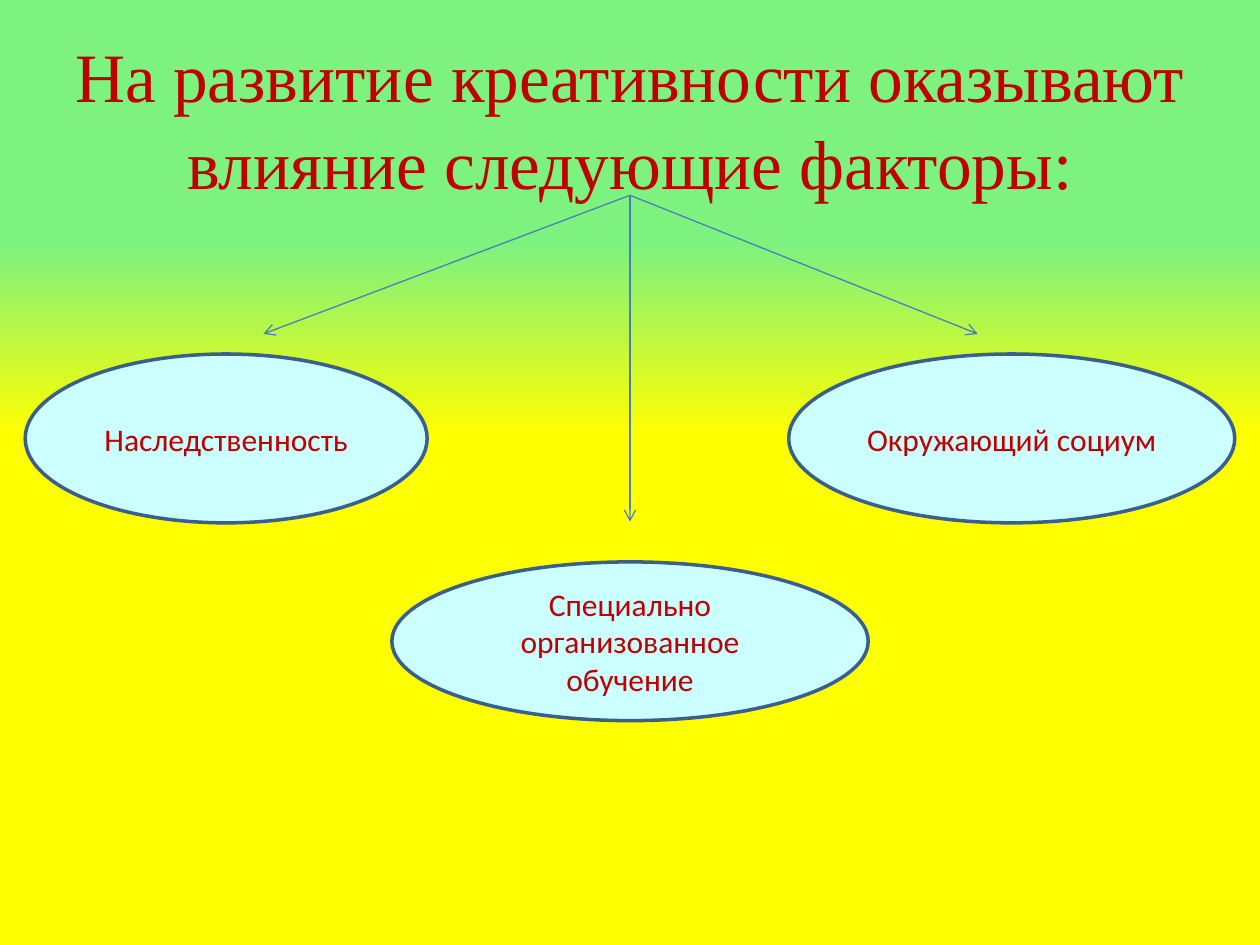
from dataclasses import dataclass

from lxml.etree import SubElement
from pptx import Presentation
from pptx.dml.color import RGBColor
from pptx.enum.shapes import MSO_CONNECTOR, MSO_SHAPE
from pptx.enum.text import MSO_ANCHOR, PP_ALIGN
from pptx.oxml.ns import qn
from pptx.util import Pt


@dataclass(frozen=True)
class Theme:
    sky: str = "7EF27E"
    ground: str = "FFFF00"
    text: str = "C00000"
    oval: str = "CCFFFF"
    outline: str = "3A5F8C"
    arrow: str = "4B7EBC"
    title_font: str = "Times New Roman"
    body_font: str = "Calibri"
    title_size: float = 39.6
    body_size: float = 18


THEME = Theme()
SLIDE_WIDTH, SLIDE_HEIGHT = 720, 540
TITLE = "На развитие креативности оказывают влияние следующие факторы:"
ARROW_START = (360, 111.6)

# Factor, oval (left, top, width, height), arrow tip
FACTORS = [
    ("Наследственность", (14.4, 202.3, 229.7, 96.5), (150.5, 190.8)),
    ("Специально организованное обучение", (223.9, 321.1, 272.2, 90.7), (360, 298.1)),
    ("Окружающий социум", (450.7, 202.3, 254.9, 96.5), (558.7, 190.8)),
]


def rgb(value):
    return RGBColor.from_string(value)


def paint_background(slide):
    fill = slide.background.fill
    fill.gradient()
    fill.gradient_angle = 270
    stops = ((0.26, THEME.sky), (0.46, THEME.ground))
    for stop, (position, color) in zip(fill.gradient_stops, stops):
        stop.position = position
        stop.color.rgb = rgb(color)


def write_centered(frame, text, font, size):
    frame.word_wrap = True
    frame.vertical_anchor = MSO_ANCHOR.MIDDLE
    paragraph = frame.paragraphs[0]
    paragraph.alignment = PP_ALIGN.CENTER
    run = paragraph.add_run()
    run.text = text
    run.font.name = font
    run.font.size = Pt(size)
    run.font.color.rgb = rgb(THEME.text)
    return paragraph


def add_title(slide):
    title = slide.shapes.add_textbox(Pt(0), Pt(21.6), Pt(SLIDE_WIDTH), Pt(90))
    paragraph = write_centered(title.text_frame, TITLE, THEME.title_font, THEME.title_size)
    paragraph.line_spacing = 1.04


def add_factor(slide, text, bounds):
    oval = slide.shapes.add_shape(MSO_SHAPE.OVAL, *map(Pt, bounds))
    oval.shadow.inherit = False
    oval.fill.solid()
    oval.fill.fore_color.rgb = rgb(THEME.oval)
    oval.line.color.rgb = rgb(THEME.outline)
    oval.line.width = Pt(2)
    write_centered(oval.text_frame, text, THEME.body_font, THEME.body_size)


def add_arrow(slide, start, tip):
    arrow = slide.shapes.add_connector(MSO_CONNECTOR.STRAIGHT, *map(Pt, start + tip))
    arrow.line.color.rgb = rgb(THEME.arrow)
    arrow.line.width = Pt(0.75)
    SubElement(arrow.line._get_or_add_ln(), qn("a:tailEnd"), type="arrow")
    SubElement(arrow._element.spPr, qn("a:effectLst"))


def main():
    deck = Presentation()
    deck.slide_width, deck.slide_height = Pt(SLIDE_WIDTH), Pt(SLIDE_HEIGHT)
    slide = deck.slides.add_slide(deck.slide_layouts[6])

    # Background and heading
    paint_background(slide)
    add_title(slide)

    # Factors, then the arrows leading to them
    for text, bounds, _ in FACTORS:
        add_factor(slide, text, bounds)
    for _, _, tip in FACTORS:
        add_arrow(slide, ARROW_START, tip)

    deck.save("out.pptx")


if __name__ == "__main__":
    main()
